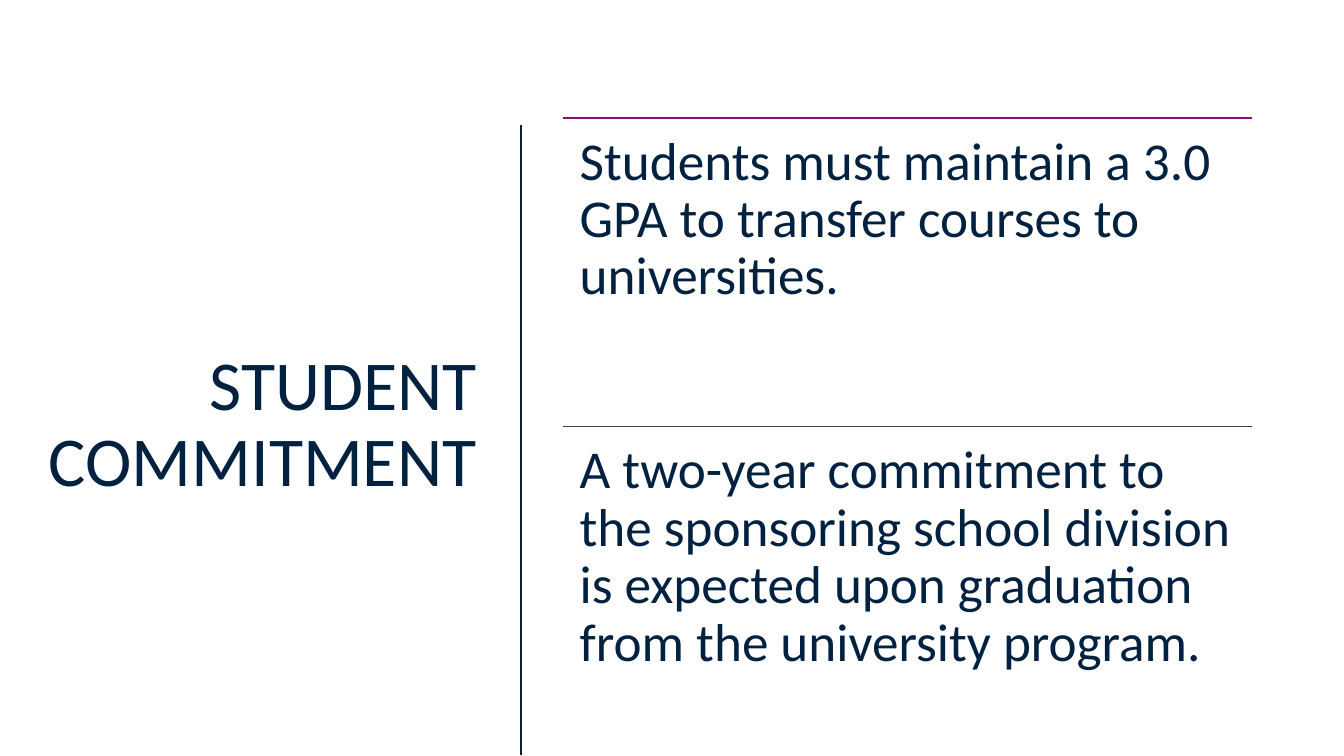
"""Build the student commitment slide: a title beside two ruled statements."""
import pptx
import pptx.dml.color
import pptx.enum.shapes
import pptx.enum.text
import pptx.oxml.ns
import pptx.util
from lxml import etree

Cm = pptx.util.Cm
Pt = pptx.util.Pt
ALIGN = pptx.enum.text.PP_ALIGN
ANCHOR = pptx.enum.text.MSO_ANCHOR

NAVY = pptx.dml.color.RGBColor(0x00, 0x21, 0x3F)
PURPLE = pptx.dml.color.RGBColor(0x8A, 0x0F, 0x73)
GRAY = pptx.dml.color.RGBColor(0x3F, 0x3F, 0x3F)

HEADING = "STUDENT COMMITMENT"
COMMITMENTS = [
    ("Students must maintain a 3.0 GPA to transfer courses to universities.", PURPLE),
    ("A two-year commitment to the sponsoring school division is expected "
     "upon graduation from the university program.", GRAY),
]

TOP = 2.97
HEADING_LEFT, HEADING_WIDTH, HEADING_HEIGHT = 0.74, 11.53, 15.52
DIVIDER_X, DIVIDER_TOP, DIVIDER_BOTTOM = 13.13, 3.15, 19.02
LIST_LEFT, LIST_WIDTH, ROW_HEIGHT = 14.2, 17.35, 7.78


def add_text(slide, text, *, box, size, inset, align=ALIGN.LEFT, anchor=ANCHOR.TOP):
    frame = slide.shapes.add_textbox(*map(Cm, box)).text_frame
    frame.word_wrap = True
    frame.vertical_anchor = anchor
    frame.margin_left = frame.margin_right = Cm(inset)
    frame.margin_top = frame.margin_bottom = Cm(inset)
    paragraph = frame.paragraphs[0]
    paragraph.alignment = align
    paragraph.line_spacing = 0.9
    run = paragraph.add_run()
    run.text = text
    run.font.name = "Calibri"
    run.font.size = Pt(size)
    run.font.color.rgb = NAVY


def add_rule(slide, ends, color, width):
    rule = slide.shapes.add_connector(
        pptx.enum.shapes.MSO_CONNECTOR.STRAIGHT, *map(Cm, ends))
    rule.line.color.rgb = color
    rule.line.width = Pt(width)
    etree.SubElement(rule.element.spPr, pptx.oxml.ns.qn("a:effectLst"))


def main():
    deck = pptx.Presentation()
    deck.slide_width, deck.slide_height = Cm(33.87), Cm(19.05)
    slide = deck.slides.add_slide(deck.slide_layouts[6])

    add_text(slide, HEADING, box=(HEADING_LEFT, TOP, HEADING_WIDTH, HEADING_HEIGHT),
             size=50, inset=0.25, align=ALIGN.RIGHT, anchor=ANCHOR.MIDDLE)
    add_rule(slide, (DIVIDER_X, DIVIDER_TOP, DIVIDER_X, DIVIDER_BOTTOM), NAVY, 2)

    for row, (commitment, rule_color) in enumerate(COMMITMENTS):
        y = TOP + row * ROW_HEIGHT
        add_rule(slide, (LIST_LEFT, y, LIST_LEFT + LIST_WIDTH, y), rule_color, 1)
        add_text(slide, commitment, box=(LIST_LEFT, y, LIST_WIDTH, ROW_HEIGHT),
                 size=38, inset=0.41)

    deck.save("out.pptx")


if __name__ == "__main__":
    main()
